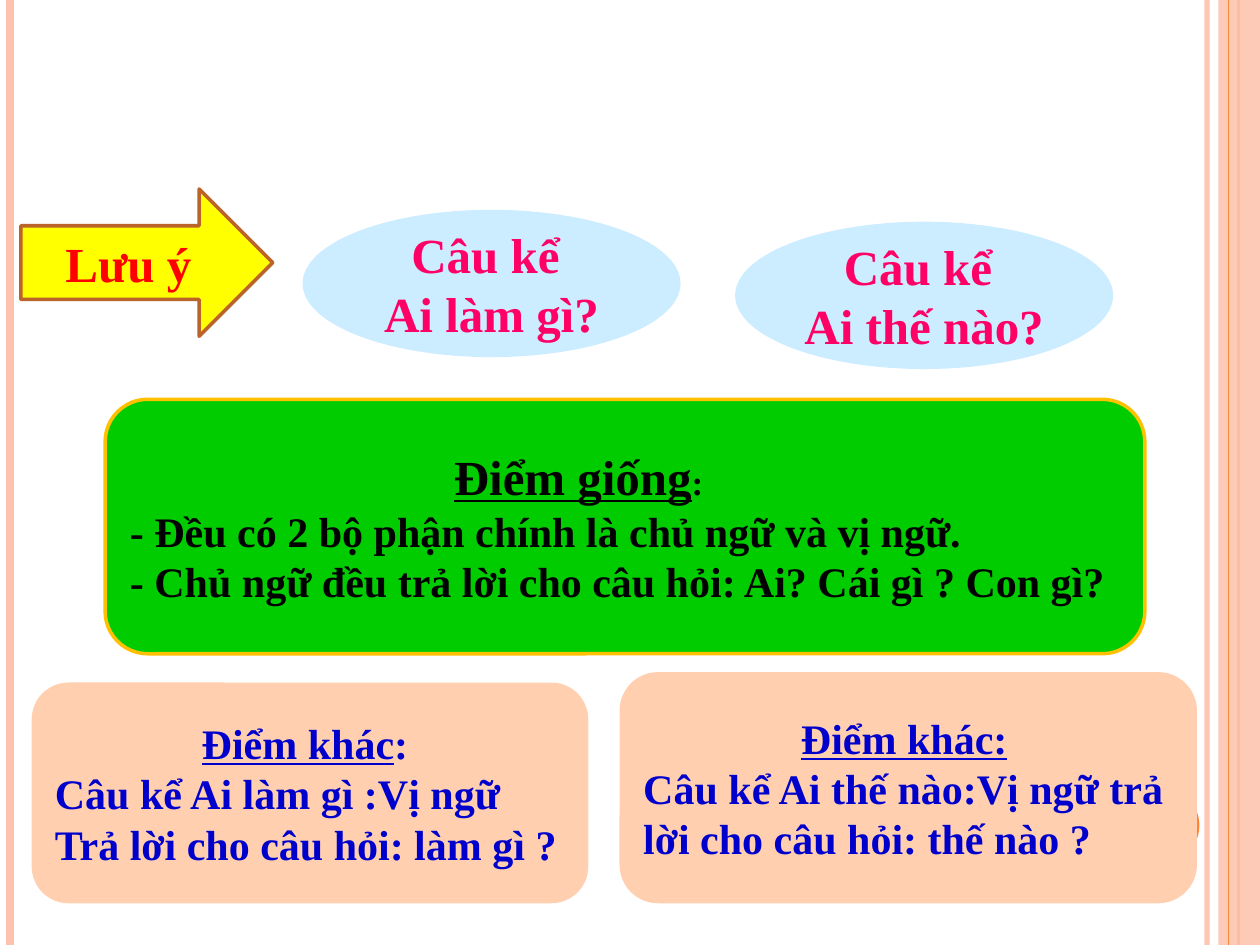
from lxml.etree import SubElement
from pptx import Presentation
from pptx.dml.color import RGBColor
from pptx.enum.shapes import MSO_CONNECTOR, MSO_SHAPE
from pptx.enum.text import MSO_ANCHOR, PP_ALIGN as Align
from pptx.oxml.ns import qn
from pptx.util import Cm, Pt

FONT = "Times New Roman"
WIDTH, HEIGHT = 25.4, 19.05
COLORS = {
    "stripe": "FEC3AE", "orange": "FE8637", "yellow": "FFFF00",
    "brown": "BC6329", "red": "FF0000", "sky": "CCECFF", "pink": "FF0066",
    "green": "00CC00", "gold": "FFC000", "black": "000000",
    "peach": "FFCFAF", "blue": "0000CC",
}


def color(name):
    return RGBColor.from_string(COLORS[name])


def set_alpha(fill, percent):
    """Make a solid fill or line partly transparent."""
    node = next(fill.iter(qn("a:srgbClr")))
    SubElement(node, qn("a:alpha")).set("val", str(percent * 1000))


def add_box(page, kind, box, fill, line=None):
    shape = page.shapes.add_shape(kind, *map(Cm, box))
    shape.shadow.inherit = False
    shape.fill.solid()
    shape.fill.fore_color.rgb = color(fill)
    if line:
        shape.line.color.rgb = color(line)
        shape.line.width = Pt(2)
    else:
        shape.line.fill.background()
    shape.text_frame.word_wrap = True
    shape.text_frame.vertical_anchor = MSO_ANCHOR.MIDDLE
    return shape


def add_para(frame, first, size, ink, align=Align.LEFT):
    para = frame.paragraphs[0] if first else frame.add_paragraph()
    para.alignment = align
    para.font.name, para.font.size, para.font.bold = FONT, Pt(size), True
    para.font.color.rgb = color(ink)
    return para


def add_stripe(page, x, height, name, width, alpha=None):
    stripe = page.shapes.add_connector(
        MSO_CONNECTOR.STRAIGHT, Cm(x), 0, Cm(x), Cm(height))
    stripe.line.color.rgb = color(name)
    stripe.line.width = Pt(width)
    properties = stripe._element.spPr
    if alpha:
        set_alpha(properties, alpha)
    SubElement(properties, qn("a:effectLst"))


def add_frame(page, box):
    """Vertical stripes at both edges and the dot at lower right."""
    left, top, width, height = box
    right = left + width
    add_stripe(page, right - 1.07, height, "stripe", 3, alpha=93)
    add_stripe(page, left + 0.2, height, "stripe", 4.5)
    add_stripe(page, right - 0.43, height, "orange", 1.5)
    band = add_box(page, MSO_SHAPE.RECTANGLE,
                   (right - 0.84, top, 0.84, height), "stripe")
    set_alpha(band._element.spPr, 87)
    add_stripe(page, right - 0.63, height, "orange", 0.75)
    add_box(page, MSO_SHAPE.OVAL,
            (right - 2.74, top + 15.88, 1.52, 1.52), "orange")


def add_label(page, kind, box, lines, fill, ink, line=None):
    """A shape with centred lines of large text."""
    frame = add_box(page, kind, box, fill, line).text_frame
    for index, text in enumerate(lines):
        add_para(frame, index == 0, 28, ink, Align.CENTER).text = text


def add_card(page, box, indent, heading, lines, fill, ink,
             line=None, heading_size=24, tail="", tail_size=24):
    """A rounded card: indented, underlined heading above plain lines."""
    frame = add_box(page, MSO_SHAPE.ROUNDED_RECTANGLE, box, fill, line).text_frame
    para = add_para(frame, True, heading_size, ink)
    para._p.get_or_add_pPr().set("indent", str(Cm(indent)))
    span = para.add_run()
    span.text, span.font.underline = heading, True
    if tail:
        span = para.add_run()
        span.text, span.font.size = tail, Pt(tail_size)
    for text in lines:
        add_para(frame, False, 24, ink).text = text


def main():
    deck = Presentation()
    deck.slide_width, deck.slide_height = Cm(WIDTH), Cm(HEIGHT)
    page = deck.slides.add_slide(deck.slide_layouts[6])
    add_frame(page, (0, 0, WIDTH, HEIGHT))

    # Note arrow
    add_label(page, MSO_SHAPE.RIGHT_ARROW, (0.42, 3.81, 5.08, 2.97),
              ["Lưu ý"], "yellow", "red", "brown")

    # Differences
    add_card(page, (12.49, 13.55, 11.64, 4.66), 3.18, "Điểm khác:",
             ["Câu kể Ai thế nào:Vị ngữ trả lời cho câu hỏi: thế nào ?"],
             "peach", "blue")
    add_card(page, (0.64, 13.76, 11.22, 4.45), 2.96, "Điểm khác",
             ["Câu kể Ai làm gì :Vị ngữ Trả lời cho câu hỏi: làm gì ?"],
             "peach", "blue", tail=":")

    # Sentence types
    for left, top, question in ((6.1, 4.23, "Ai làm gì?"),
                                (14.82, 4.47, "Ai thế nào?")):
        add_label(page, MSO_SHAPE.OVAL, (left, top, 7.62, 2.97),
                  ["Câu kể ", question], "sky", "pink")

    # Similarities
    add_card(page, (2.12, 8.05, 20.96, 5.13), 6.53, "Điểm giống",
             ["- Đều có 2 bộ phận chính là chủ ngữ và vị ngữ.",
              "- Chủ ngữ đều trả lời cho câu hỏi: Ai? Cái gì ? Con gì?"],
             "green", "black", "gold", heading_size=28, tail=":", tail_size=20)

    deck.save("out.pptx")


if __name__ == "__main__":
    main()
